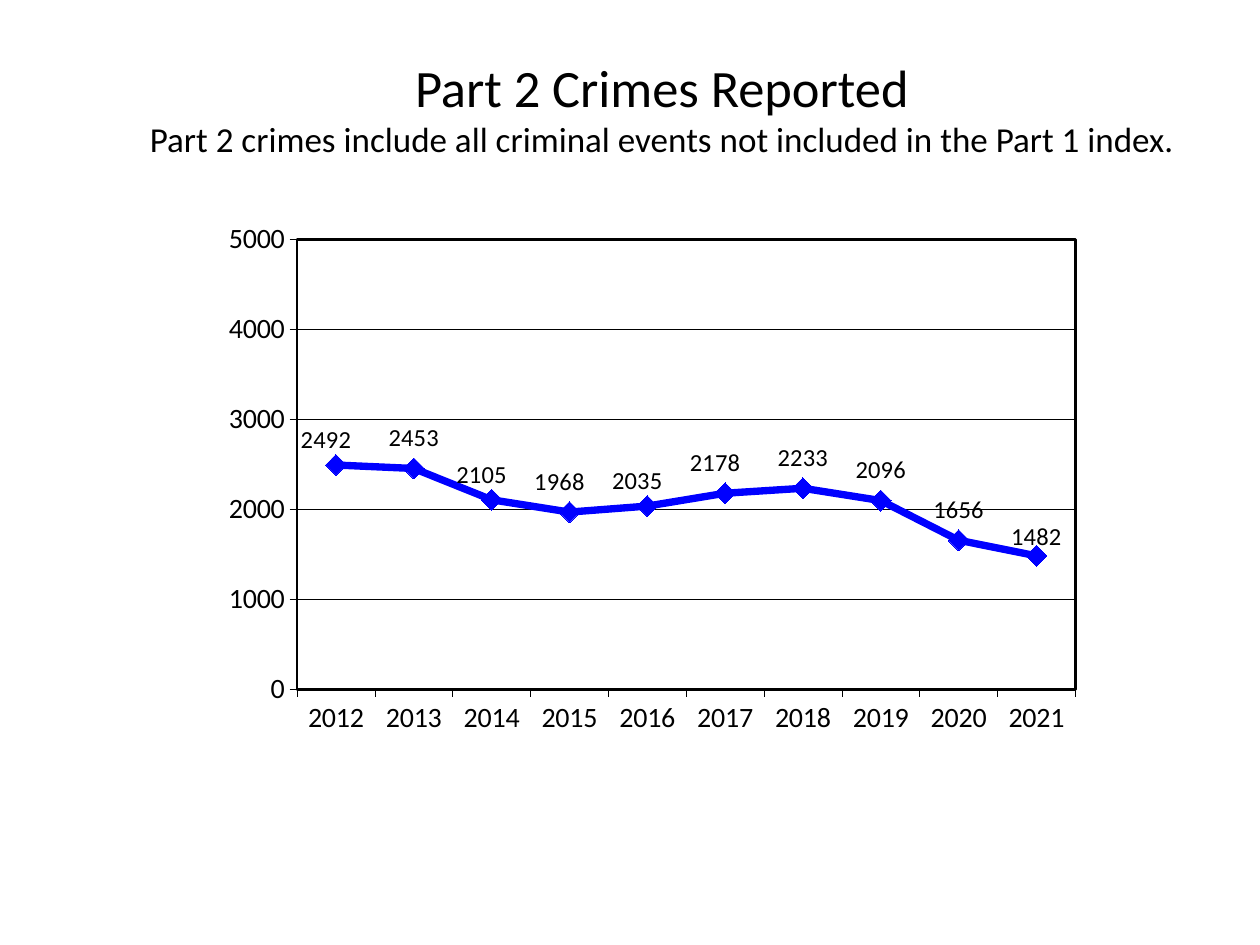
from lxml import etree
from pptx import Presentation
from pptx import util as u
from pptx.chart import data
from pptx.dml.color import RGBColor
from pptx.enum import chart as ch, text
from pptx.oxml import parse_xml
from pptx.oxml.ns import nsdecls, qn


def color(code):
    return RGBColor.from_string(code)


def layout(**parts):
    tags = "".join(f'<c:{k} val="{v}"/>' for k, v in parts.items())
    return parse_xml(f'<c:layout {nsdecls("c")}><c:manualLayout>{tags}'
                     '</c:manualLayout></c:layout>')


deck = Presentation()
deck.slide_width, deck.slide_height = u.Inches(10), u.Inches(7.5)
slide = deck.slides.add_slide(deck.slide_layouts[5])

# Title with a smaller second line
title = slide.shapes.title
title.left, title.top = u.Inches(0.92), u.Inches(0.38)
title.width, title.height = u.Inches(8.67), u.Inches(0.94)
frame = title.text_frame
frame.text = ("Part 2 Crimes Reported\v"
              "Part 2 crimes include all criminal events not included in the Part 1 index.")
frame.vertical_anchor = text.MSO_ANCHOR.MIDDLE
para = frame.paragraphs[0]
para.alignment = text.PP_ALIGN.CENTER
for run, size in zip(para.runs, (30, 20)):
    run.font.size = u.Pt(size)
    run.font.name = "Calibri"
    run.font.color.rgb = color("000000")

# Line chart of yearly counts
counts = data.CategoryChartData()
counts.categories = [str(year) for year in range(2012, 2022)]
counts.add_series("Series 1", (2492, 2453, 2105, 1968, 2035,
                               2178, 2233, 2096, 1656, 1482))
chart = slide.shapes.add_chart(
    ch.XL_CHART_TYPE.LINE_MARKERS, u.Inches(1.17), u.Inches(1.67),
    u.Inches(7.92), u.Inches(4.58), counts).chart
chart.has_legend = chart.has_title = False
chart.font.size = u.Pt(16)
chart.font.name = "Calibri"
chart.font.color.rgb = color("000000")

# Axes and gridlines
years, scale = chart.category_axis, chart.value_axis
scale.minimum_scale, scale.maximum_scale, scale.major_unit = 0, 5000, 1000
scale.has_major_gridlines = True
for axis in (years, scale):
    axis.major_tick_mark = ch.XL_TICK_MARK.OUTSIDE
for part in (years, scale, scale.major_gridlines):
    part.format.line.color.rgb = color("000000")
    part.format.line.width = u.Pt(0.35)

# Plot area place and border
plot = chart.plots[0]
area = chart._chartSpace.chart.plotArea
for old in area.findall(qn("c:layout")):
    area.remove(old)
area.insert(0, layout(layoutTarget="inner", xMode="edge", yMode="edge",
                      x=0.15, y=0.05, w=0.78, h=0.78))
area.append(parse_xml(
    f'<c:spPr {nsdecls("c", "a")}><a:noFill/><a:ln w="{u.Pt(1.5)}"><a:solidFill>'
    '<a:srgbClr val="000000"/></a:solidFill></a:ln></c:spPr>'))

# Line and diamond markers
line = plot.series[0]
line.smooth = False
line.format.line.color.rgb = color("0000FF")
line.format.line.width = u.Pt(4.2)
mark = line.marker
mark.style, mark.size = ch.XL_MARKER_STYLE.DIAMOND, 12
mark.format.fill.solid()
mark.format.fill.fore_color.rgb = color("0000FF")
mark.format.line.color.rgb = color("0000FF")

# Value labels, some nudged as a share of the chart size
labels = line.data_labels
labels.show_value = True
labels.position = ch.XL_LABEL_POSITION.ABOVE
labels.font.size = u.Pt(14)
nudges = {0: (-0.01, 0.01), 2: (-0.01, 0.01), 3: (-0.01, 0),
          4: (-0.01, 0.01), 5: (-0.01, 0), 9: (0, 0.02)}
for spot, (x, y) in nudges.items():
    label = line.points[spot].data_label
    label.position = ch.XL_LABEL_POSITION.ABOVE
    label.font.size = u.Pt(14)
    label._dLbl.insert(1, layout(x=x, y=y))

deck.save("out.pptx")
